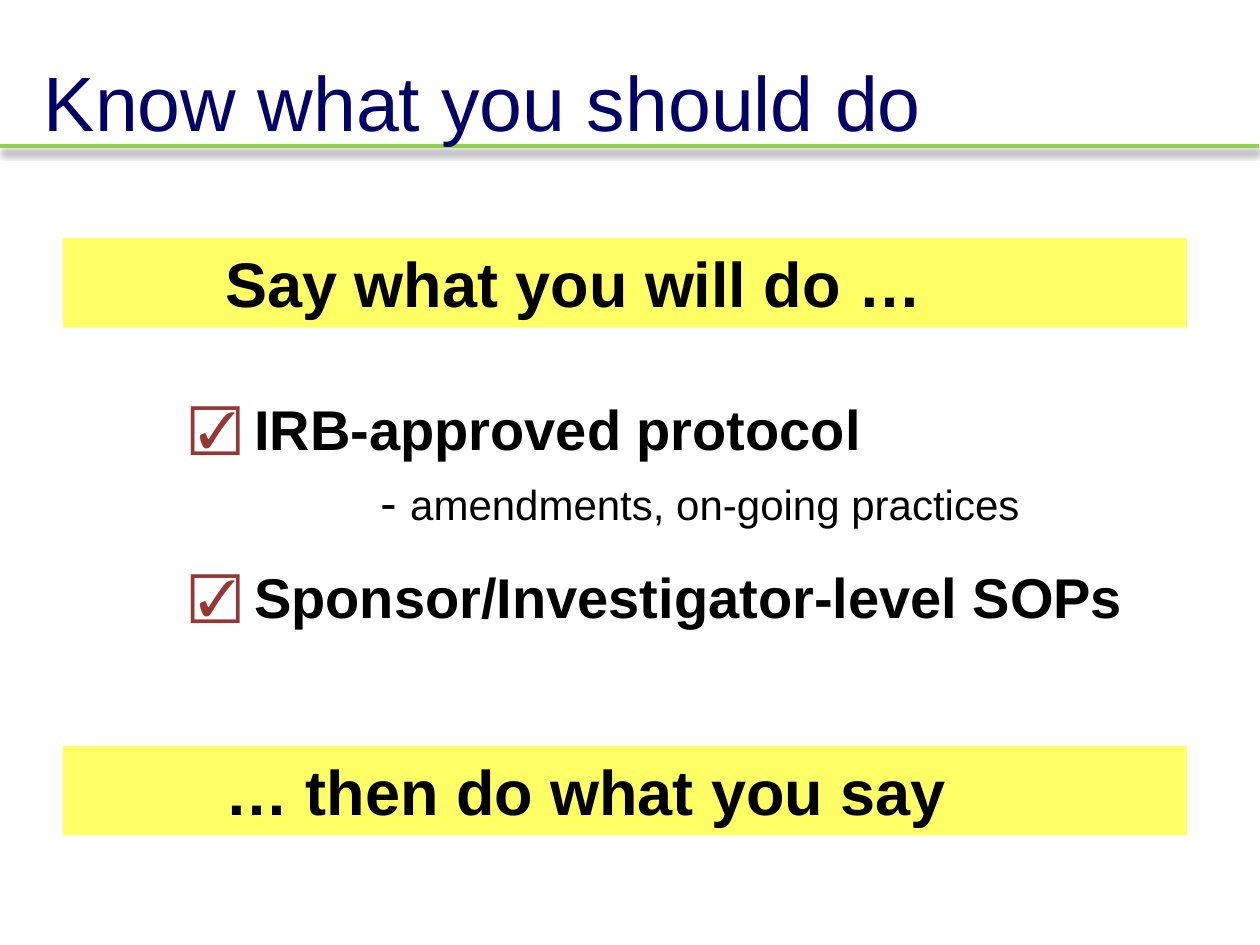
"""Build the slide 'Know what you should do' with two banners and a checklist."""
import lxml.etree
import pptx
import pptx.dml.color
import pptx.enum.shapes
import pptx.enum.text
import pptx.oxml
import pptx.oxml.ns
import pptx.util

COLORS = {"title": "000066", "text": "000000", "rule": "92D050",
          "banner": "FFFF66", "check": "953735", "shadow": "000000"}
NAMESPACE = pptx.oxml.ns.nsdecls("a")

deck = pptx.Presentation()
deck.slide_width = pptx.util.Inches(10)
deck.slide_height = pptx.util.Inches(7.5)
page = deck.slides.add_slide(deck.slide_layouts[6])
column = deck.slide_width / 20
row = deck.slide_height / 15


def write(para, text, size=32, bold=False, color="text", before=0, left=0, hanging=0, bullet=None):
    span = para.add_run()
    span.text = text
    span.font.name = "Arial"
    span.font.size = pptx.util.Pt(size)
    span.font.bold = bold
    span.font.color.rgb = pptx.dml.color.RGBColor.from_string(COLORS[color])
    para.alignment = pptx.enum.text.PP_ALIGN.LEFT
    para.space_before = pptx.util.Pt(before)
    properties = para._p.get_or_add_pPr()
    properties.set("marL", str(round(left * column)))
    properties.set("indent", str(round(-hanging * column)))
    if bullet:
        for markup in (f'<a:buClr {NAMESPACE}><a:srgbClr val="{COLORS["check"]}"/></a:buClr>',
                       f'<a:buSzPct {NAMESPACE} val="90000"/>',
                       f'<a:buFont {NAMESPACE} typeface="Arial"/>',
                       f'<a:buChar {NAMESPACE} char="{bullet}"/>'):
            properties.append(pptx.oxml.parse_xml(markup))


def add_text_box(x, y, width, height, anchor):
    box = page.shapes.add_textbox(round(x * column), round(y * row),
                                  round(width * column), round(height * row))
    box.text_frame.word_wrap = True
    box.text_frame.vertical_anchor = anchor
    return box.text_frame


rule = page.shapes.add_connector(pptx.enum.shapes.MSO_CONNECTOR.STRAIGHT,
                                 0, round(2.32 * row), round(19.98 * column), round(2.32 * row))
rule.line.color.rgb = pptx.dml.color.RGBColor.from_string(COLORS["rule"])
rule.line.width = pptx.util.Pt(2)
rule._element.spPr.append(pptx.oxml.parse_xml(
    f'<a:effectLst {NAMESPACE}><a:outerShdw blurRad="{pptx.util.Pt(4)}" dist="{pptx.util.Pt(3)}" '
    f'dir="5400000" rotWithShape="0"><a:srgbClr val="{COLORS["shadow"]}">'
    '<a:alpha val="40000"/></a:srgbClr></a:outerShdw></a:effectLst>'))

title = add_text_box(0.5, 0.34, 18, 2.5, pptx.enum.text.MSO_ANCHOR.MIDDLE)
write(title.paragraphs[0], "Know what you should do", size=44, color="title")

checklist = add_text_box(0.96, 6.16, 18, 5, pptx.enum.text.MSO_ANCHOR.TOP)
check = {"bold": True, "left": 2.88, "hanging": 1.02, "bullet": "☑"}
write(checklist.paragraphs[0], "IRB-approved protocol", before=24, **check)
detail = checklist.add_paragraph()
for text, size in (("- ", 28), ("amendments, on-going practices", 24)):
    write(detail, text, size=size, before=6, left=4.88)
write(checklist.add_paragraph(), "Sponsor/Investigator-level SOPs", before=18, **check)

for y, text in ((3.78, "Say what you will do …"), (11.84, "… then do what you say")):
    banner = page.shapes.add_shape(pptx.enum.shapes.MSO_SHAPE.RECTANGLE,
                                   round(column), round(y * row),
                                   round(17.84 * column), round(1.42 * row))
    banner.shadow.inherit = False
    banner.fill.solid()
    banner.fill.fore_color.rgb = pptx.dml.color.RGBColor.from_string(COLORS["banner"])
    banner.line.fill.background()
    banner.text_frame.word_wrap = True
    banner.text_frame.vertical_anchor = pptx.enum.text.MSO_ANCHOR.TOP
    write(banner.text_frame.paragraphs[0], text, size=36, bold=True, before=12, left=2.38)

deck.save("out.pptx")
